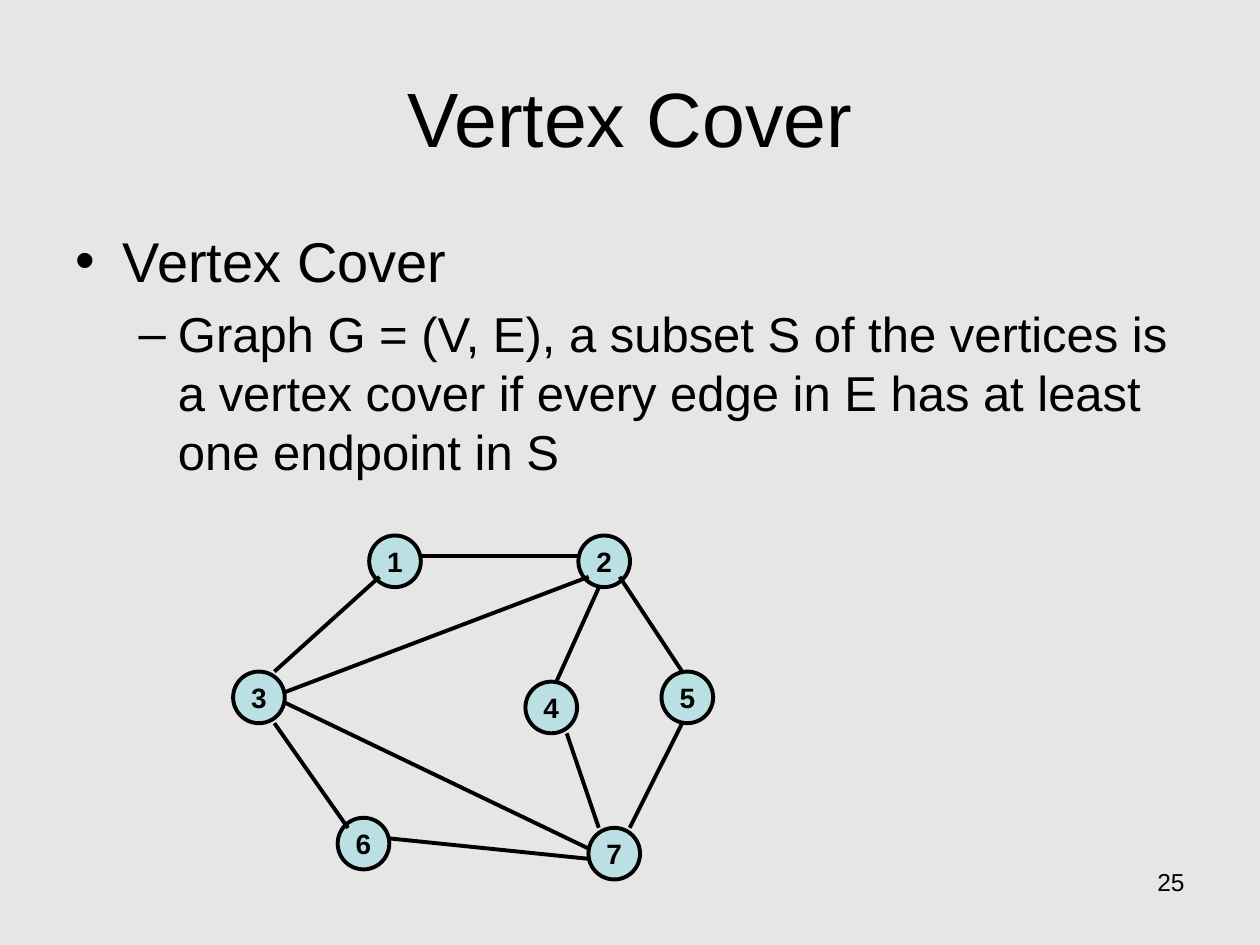
import pptx
import pptx.util
import pptx.dml.color
import pptx.enum.shapes
import pptx.enum.text
import pptx.oxml.ns
import lxml.etree

Inches = pptx.util.Inches
Pt = pptx.util.Pt
Align = pptx.enum.text.PP_ALIGN
Anchor = pptx.enum.text.MSO_ANCHOR
colors = {"back": "E6E6E6", "node": "BBE0E3", "ink": "000000"}


def tint(name):
    return pptx.dml.color.RGBColor.from_string(colors[name])


def style(para, size, bold=False):
    for run in para.runs:
        run.font.name = "Arial"
        run.font.size = Pt(size)
        run.font.bold = bold
        run.font.color.rgb = tint("ink")


deck = pptx.Presentation()
deck.slide_width = Inches(10)
deck.slide_height = Inches(7.5)
slide = deck.slides.add_slide(deck.slide_layouts[1])
slide.background.fill.solid()
slide.background.fill.fore_color.rgb = tint("back")

title = slide.shapes.title
title.left, title.top = Inches(0.5), Inches(0.3)
title.width, title.height = Inches(9), Inches(1.25)
title.text_frame.text = "Vertex Cover"
title.text_frame.vertical_anchor = Anchor.MIDDLE
title.text_frame.paragraphs[0].alignment = Align.CENTER
style(title.text_frame.paragraphs[0], 44)

body = slide.placeholders[1]
body.left, body.top = Inches(0.5), Inches(1.75)
body.width, body.height = Inches(9), Inches(2.25)
frame = body.text_frame
frame.auto_size = pptx.enum.text.MSO_AUTO_SIZE.NONE
head = frame.paragraphs[0]
head.text = "Vertex Cover"
head.space_before = Pt(0)
style(head, 32)
item = frame.add_paragraph()
item.text = (
    "Graph G = (V, E), a subset S of the vertices is a vertex cover "
    "if every edge in E has at least one endpoint in S"
)
item.level = 1
style(item, 28)

size = Inches(0.41)
step = size / 5
spots = {
    1: (2.93, 4.25),
    2: (4.59, 4.25),
    3: (1.85, 5.33),
    4: (4.17, 5.41),
    5: (5.25, 5.33),
    6: (2.68, 6.49),
    7: (4.67, 6.57),
}
nodes = {}
for label, (left, top) in spots.items():
    node = slide.shapes.add_shape(
        pptx.enum.shapes.MSO_SHAPE.OVAL, Inches(left), Inches(top), size, size
    )
    nodes[label] = node
    node.shadow.inherit = False
    node.fill.solid()
    node.fill.fore_color.rgb = tint("node")
    node.line.color.rgb = tint("ink")
    node.line.width = Pt(2.25)
    node.text_frame.text = str(label)
    node.text_frame.word_wrap = False
    node.text_frame.vertical_anchor = Anchor.MIDDLE
    node.text_frame.paragraphs[0].alignment = Align.CENTER
    style(node.text_frame.paragraphs[0], 16, True)

edges = [
    (3, (4, 0), 1, (1, 4)),
    (1, (5, 2), 2, (0, 2)),
    (2, (4, 4), 5, (2, 0)),
    (2, (2, 5), 4, (3, 0)),
    (3, (5, 2), 2, (1, 4)),
    (3, (4, 5), 6, (1, 1)),
    (3, (5, 3), 7, (0, 2)),
    (6, (5, 2), 7, (0, 3)),
    (4, (4, 5), 7, (1, 0)),
    (5, (2, 5), 7, (4, 0)),
]
for start, port, end, dock in edges:
    ends = []
    for label, (col, row) in ((start, port), (end, dock)):
        node = nodes[label]
        ends += [int(node.left + col * step), int(node.top + row * step)]
    edge = slide.shapes.add_connector(
        pptx.enum.shapes.MSO_CONNECTOR.STRAIGHT, *ends
    )
    edge.line.color.rgb = tint("ink")
    edge.line.width = Pt(2.25)
    props = edge.element.spPr
    lxml.etree.SubElement(props, pptx.oxml.ns.qn("a:effectLst"))

page = slide.shapes.add_textbox(
    Inches(7.17), Inches(6.83), Inches(2.33), Inches(0.52)
)
page.text_frame.word_wrap = True
page.text_frame.text = "25"
page.text_frame.paragraphs[0].alignment = Align.RIGHT
style(page.text_frame.paragraphs[0], 14)

deck.save("out.pptx")
